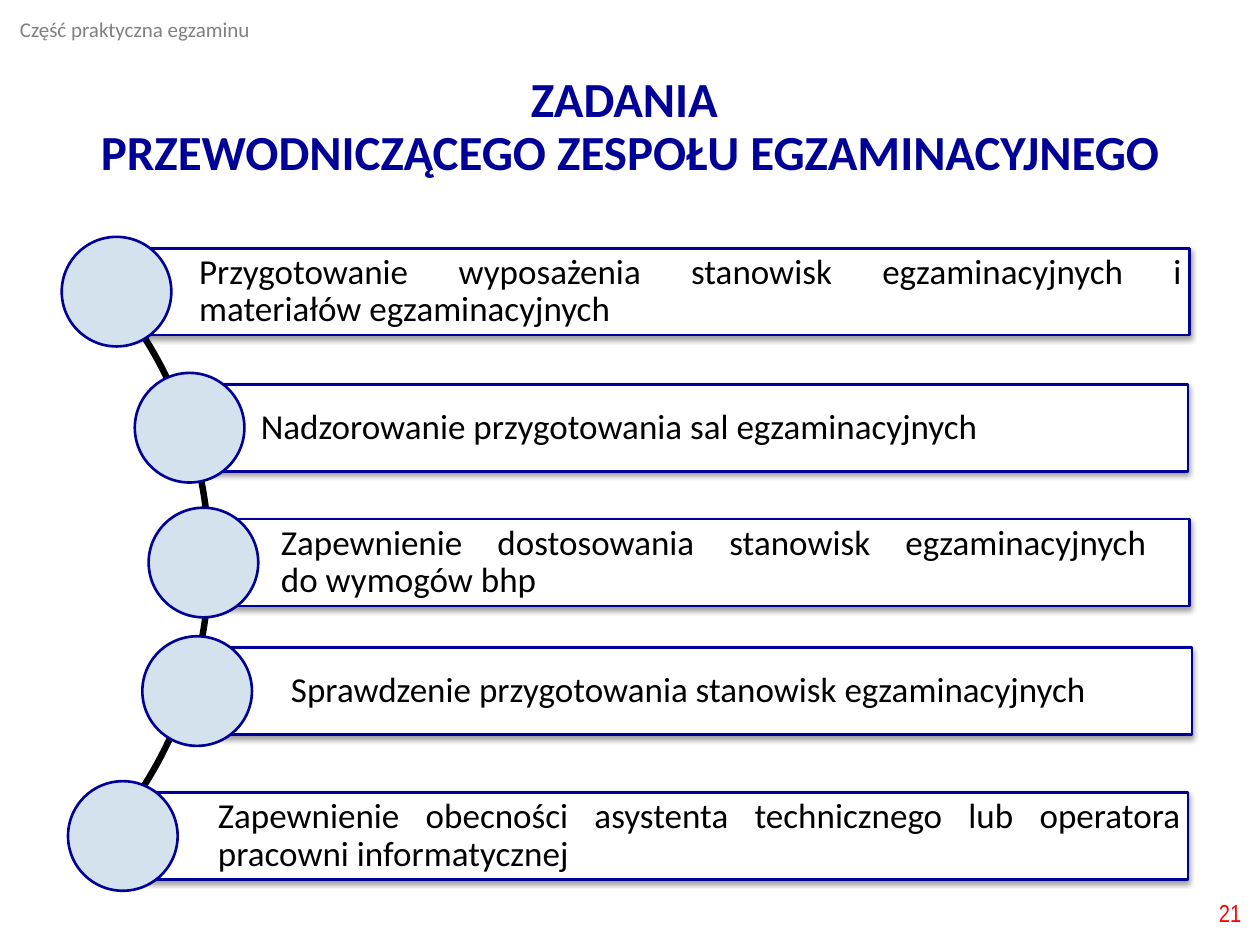
import dataclasses

import pptx
import pptx.dml.color
import pptx.enum.shapes
import pptx.enum.text
import pptx.oxml
import pptx.oxml.ns
import pptx.util

Inches = pptx.util.Inches
Pt = pptx.util.Pt
Align = pptx.enum.text.PP_ALIGN
Anchor = pptx.enum.text.MSO_ANCHOR
AutoSize = pptx.enum.text.MSO_AUTO_SIZE
Shape = pptx.enum.shapes.MSO_SHAPE


@dataclasses.dataclass(frozen=True)
class Theme:
    navy: str = "000099"
    pale_blue: str = "D4E2ED"
    white: str = "FFFFFF"
    black: str = "000000"
    grey: str = "808080"
    red: str = "FF0000"
    body_font: str = "Calibri"
    number_font: str = "Arial Narrow"
    title_size: int = 28
    task_size: int = 20
    number_size: int = 14
    header_size: int = 12
    line_spacing: float = 0.9
    outline: float = 1.5
    arc_outline: float = 2.25


BAR_HEIGHT = 0.69
DOT_SIZE = 0.87
DOT_RISE = (DOT_SIZE - BAR_HEIGHT) / 2

# bar left, bar top, bar width, dot left, alignment, wording
TASKS = [
    (1.03, 1.97, 8.41, 0.49, Align.JUSTIFY,
     "Przygotowanie wyposażenia stanowisk egzaminacyjnych i materiałów egzaminacyjnych"),
    (1.52, 3.05, 7.91, 1.07, Align.LEFT,
     "Nadzorowanie przygotowania sal egzaminacyjnych"),
    (1.68, 4.12, 7.76, 1.18, Align.JUSTIFY,
     "Zapewnienie dostosowania stanowisk egzaminacyjnych \vdo wymogów bhp"),
    (1.76, 5.14, 7.7, 1.13, Align.LEFT,
     "Sprawdzenie przygotowania stanowisk egzaminacyjnych"),
    (1.18, 6.29, 8.25, 0.54, Align.JUSTIFY,
     "Zapewnienie obecności asystenta technicznego lub operatora pracowni informatycznej"),
]


class SlideBuilder:
    def __init__(self, slide, theme):
        self.slide = slide
        self.theme = theme

    def rgb(self, value):
        return pptx.dml.color.RGBColor.from_string(value)

    def set_text(self, frame, text, size, color, align=Align.LEFT, font=None,
                 bold=False, spacing=None):
        frame.word_wrap = True
        paragraph = frame.paragraphs[0]
        paragraph.text = text
        paragraph.alignment = align
        paragraph.line_spacing = spacing
        for run in paragraph.runs:
            run.font.name = font or self.theme.body_font
            run.font.size = Pt(size)
            run.font.bold = bold
            run.font.color.rgb = self.rgb(color)

    def title(self, text, left, top, width, height):
        heading = self.slide.shapes.title
        heading.left, heading.top = Inches(left), Inches(top)
        heading.width, heading.height = Inches(width), Inches(height)
        frame = heading.text_frame
        frame.auto_size = AutoSize.NONE
        frame.vertical_anchor = Anchor.MIDDLE
        self.set_text(frame, text, self.theme.title_size, self.theme.navy,
                      Align.CENTER, bold=True, spacing=self.theme.line_spacing)

    def label(self, text, left, top, width, height, size, color,
              align=Align.LEFT, font=None, anchor=Anchor.TOP):
        box = self.slide.shapes.add_textbox(
            Inches(left), Inches(top), Inches(width), Inches(height))
        box.text_frame.vertical_anchor = anchor
        self.set_text(box.text_frame, text, size, color, align, font)

    def outlined(self, kind, left, top, width, height, line, weight, fill=None):
        shape = self.slide.shapes.add_shape(
            kind, Inches(left), Inches(top), Inches(width), Inches(height))
        shape.shadow.inherit = False
        if fill:
            shape.fill.solid()
            shape.fill.fore_color.rgb = self.rgb(fill)
        else:
            shape.fill.background()
        shape.line.color.rgb = self.rgb(line)
        shape.line.width = Pt(weight)
        return shape

    def arc(self, left, top, width, height, start, end, thickness):
        """Draw a thin block arc clockwise between two angles in degrees."""
        curve = self.outlined(Shape.BLOCK_ARC, left, top, width, height,
                              self.theme.black, self.theme.arc_outline)
        # Angles are stored in 60000ths of a degree, adjustments in 100000ths
        curve.adjustments[0] = start * 0.6
        curve.adjustments[1] = end * 0.6
        curve.adjustments[2] = thickness

    def drop_shadow(self, shape):
        effects = shape._element.spPr.find(pptx.oxml.ns.qn("a:effectLst"))
        effects.append(pptx.oxml.parse_xml(
            f'<a:outerShdw {pptx.oxml.ns.nsdecls("a")} blurRad="{Pt(3.1)}" '
            f'dist="{Pt(1.6)}" dir="5400000" rotWithShape="0">'
            f'<a:srgbClr val="{self.theme.black}"><a:alpha val="38000"/></a:srgbClr>'
            '</a:outerShdw>'))

    def task(self, left, top, width, dot_left, align, text):
        theme = self.theme
        bar = self.outlined(Shape.RECTANGLE, left, top, width, BAR_HEIGHT,
                            theme.navy, theme.outline, theme.white)
        self.drop_shadow(bar)
        frame = bar.text_frame
        frame.margin_left = Inches(0.55)
        frame.margin_top = frame.margin_right = frame.margin_bottom = Inches(0.06)
        frame.vertical_anchor = Anchor.MIDDLE
        self.set_text(frame, text, theme.task_size, theme.black, align,
                      spacing=theme.line_spacing)
        self.outlined(Shape.OVAL, dot_left, top - DOT_RISE, DOT_SIZE, DOT_SIZE,
                      theme.navy, theme.outline, theme.pale_blue)


def main():
    deck = pptx.Presentation()
    deck.slide_width, deck.slide_height = Inches(10), Inches(7.5)
    title_only = deck.slide_layouts.get_by_name("Title Only")
    theme = Theme()
    builder = SlideBuilder(deck.slides.add_slide(title_only), theme)

    builder.title("ZADANIA \vPRZEWODNICZĄCEGO ZESPOŁU EGZAMINACYJNEGO",
                  0.51, 0.76, 8.98, 0.51)
    builder.label("Część praktyczna egzaminu", 0.06, 0.08, 2.67, 0.3,
                  theme.header_size, theme.grey)
    builder.arc(-4.99, 1.12, 6.66, 6.67, start=315, end=45, thickness=0.003)
    for task in TASKS:
        builder.task(*task)
    builder.label("21", 7.7, 7.04, 2.25, 0.4, theme.number_size, theme.red,
                  Align.RIGHT, theme.number_font, Anchor.MIDDLE)

    deck.save("out.pptx")


if __name__ == "__main__":
    main()
